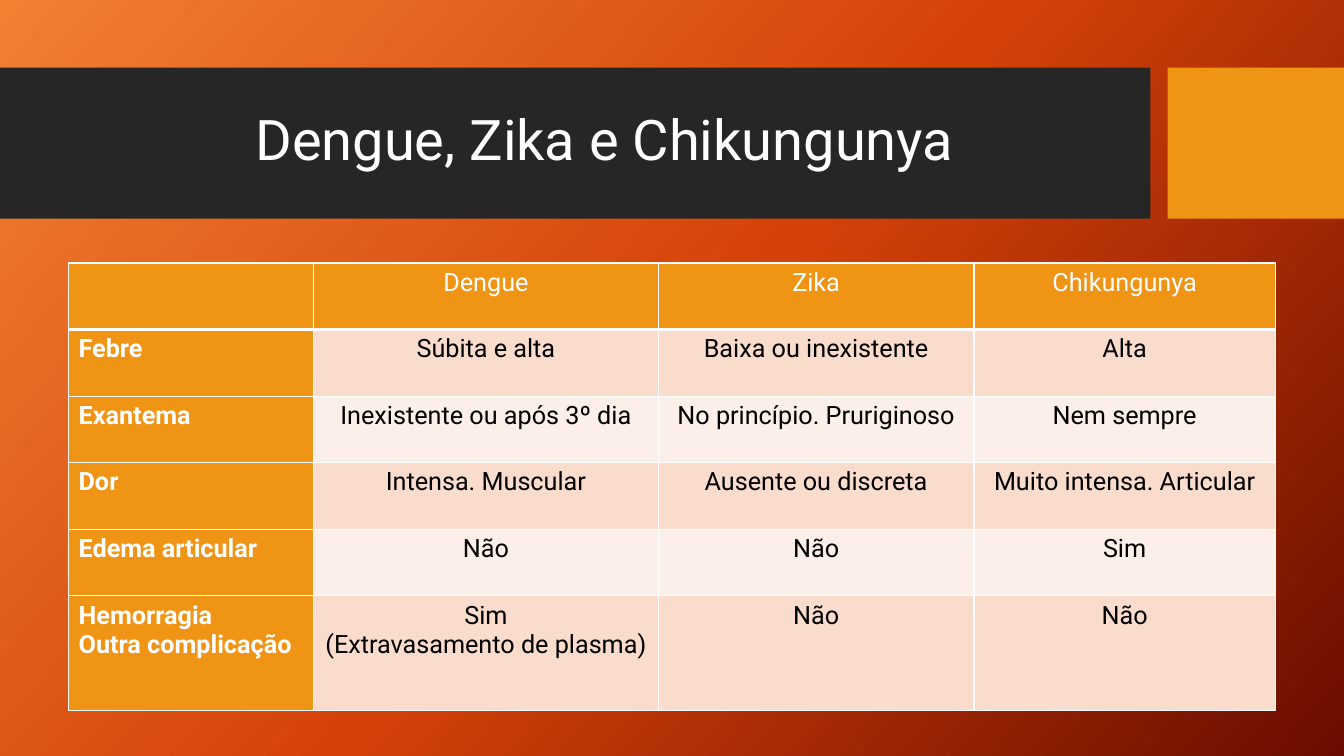
from copy import deepcopy

from pptx import Presentation
from pptx.dml.color import RGBColor
from pptx.enum.shapes import MSO_SHAPE
from pptx.enum.text import MSO_ANCHOR, PP_ALIGN
from pptx.oxml import parse_xml
from pptx.oxml.ns import nsdecls, qn
from pptx.util import Inches, Pt

WHITE = RGBColor(0xFF, 0xFF, 0xFF)
BLACK = RGBColor(0x00, 0x00, 0x00)
CHARCOAL = RGBColor(0x26, 0x26, 0x26)
AMBER = RGBColor(0xF0, 0x94, 0x15)
PEACH = RGBColor(0xF9, 0xDC, 0xCC)
PALE_PEACH = RGBColor(0xFC, 0xEE, 0xE8)
BACKGROUND = [
    (0, RGBColor(0xF1, 0x80, 0x31)),
    (0.5, RGBColor(0xD5, 0x42, 0x09)),
    (1, RGBColor(0x6A, 0x0D, 0x00)),
]

SYMPTOMS = [
    ["", "Dengue", "Zika", "Chikungunya"],
    ["Febre", "Súbita e alta", "Baixa ou inexistente", "Alta"],
    ["Exantema", "Inexistente ou após 3º dia", "No princípio. Pruriginoso", "Nem sempre"],
    ["Dor", "Intensa. Muscular", "Ausente ou discreta", "Muito intensa. Articular"],
    ["Edema articular", "Não", "Não", "Sim"],
    ["Hemorragia\nOutra complicação", "Sim\n(Extravasamento de plasma)", "Não", "Não"],
]
COLUMN_WIDTHS = [2.43, 3.42, 3.13, 2.99]
ROW_HEIGHTS = [0.66] * 5 + [1.14]


class SlideBuilder:
    font = "Roboto"

    def __init__(self, slide):
        self.s = slide

    def gradient_background(self, stops, angle):
        fill = self.s.background.fill
        fill.gradient()
        fill.gradient_angle = angle
        gs_list = self.s.element.find(".//" + qn("a:gsLst"))
        for _ in range(len(stops) - len(gs_list)):
            gs_list.append(deepcopy(gs_list[-1]))
        for stop, (position, color) in zip(fill.gradient_stops, stops):
            stop.position = position
            stop.color.rgb = color

    def rectangle(self, x, y, w, h, color):
        sp = self.s.shapes.add_shape(
            MSO_SHAPE.RECTANGLE, Inches(x), Inches(y), Inches(w), Inches(h))
        sp.shadow.inherit = False
        sp.fill.solid()
        sp.fill.fore_color.rgb = color
        sp.line.fill.background()

    def set_text(self, tf, text, size, color, align, bold=False):
        tf.text = text
        for p in tf.paragraphs:
            p.alignment = align
            p.font.name = self.font
            p.font.size = Pt(size)
            p.font.bold = bold
            p.font.color.rgb = color

    def title(self, x, y, w, h, text):
        sp = self.s.shapes.add_textbox(Inches(x), Inches(y), Inches(w), Inches(h))
        tf = sp.text_frame
        tf.word_wrap = True
        tf.vertical_anchor = MSO_ANCHOR.MIDDLE
        self.set_text(tf, text, 40, WHITE, PP_ALIGN.CENTER)
        tf.paragraphs[0].line_spacing = 0.9

    def borders(self, cell, color, bottom_width):
        tc_pr = cell._tc.get_or_add_tcPr()
        for side, width in (("L", 1), ("R", 1), ("T", 1), ("B", bottom_width)):
            tc_pr.append(parse_xml(
                f'<a:ln{side} {nsdecls("a")} w="{Pt(width)}"><a:solidFill>'
                f'<a:srgbClr val="{color}"/></a:solidFill></a:ln{side}>'))

    def table(self, x, y, rows, widths, heights):
        """Draw a table with an amber header row and column and banded body rows."""
        table = self.s.shapes.add_table(
            len(rows), len(widths), Inches(x), Inches(y),
            Inches(sum(widths)), Inches(sum(heights))).table
        for column, width in zip(table.columns, widths):
            column.width = Inches(width)
        for i, (row, height) in enumerate(zip(rows, heights)):
            table.rows[i].height = Inches(height)
            for j, text in enumerate(row):
                cell = table.cell(i, j)
                heading = i == 0 or j == 0
                self.borders(cell, WHITE, 3 if i == 0 else 1)
                cell.fill.solid()
                band = PEACH if i % 2 else PALE_PEACH
                cell.fill.fore_color.rgb = AMBER if heading else band
                self.set_text(cell.text_frame, text, 18, WHITE if heading else BLACK,
                              PP_ALIGN.CENTER if j else PP_ALIGN.LEFT,
                              bold=i > 0 and j == 0)


def main():
    prs = Presentation()
    prs.slide_width = Inches(13.33)
    prs.slide_height = Inches(7.5)
    builder = SlideBuilder(prs.slides.add_slide(prs.slide_layouts[6]))
    builder.gradient_background(BACKGROUND, 360 - 42)
    builder.rectangle(0, 0.67, 11.41, 1.5, CHARCOAL)
    builder.rectangle(11.58, 0.67, 1.75, 1.5, AMBER)
    builder.title(0.74, 0.82, 10.51, 1.18, "Dengue, Zika e Chikungunya")
    builder.table(0.68, 2.61, SYMPTOMS, COLUMN_WIDTHS, ROW_HEIGHTS)
    prs.save("out.pptx")


if __name__ == "__main__":
    main()
